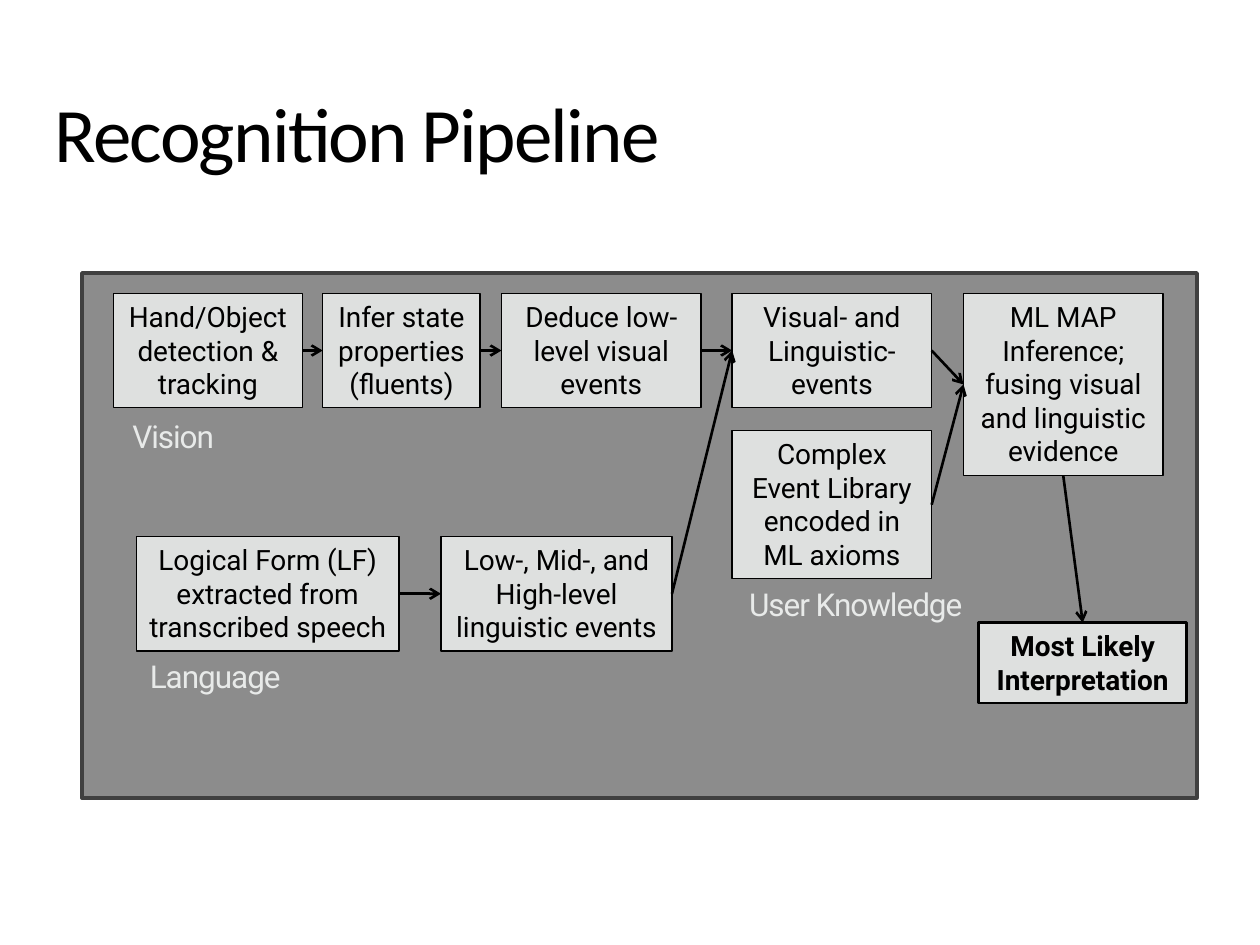
from pptx import Presentation
from pptx.dml.color import RGBColor
from pptx.enum.shapes import MSO_CONNECTOR, MSO_SHAPE
from pptx.enum.text import MSO_ANCHOR, MSO_AUTO_SIZE, PP_ALIGN
from pptx.oxml.ns import qn
from pptx.util import Pt
from lxml.etree import SubElement

THEME = {
    "ink": "000000", "panel": "404040", "box": "E8EAE9",
    "title_font": "Calibri", "body_font": "Roboto",
    "title_size": 44, "label_size": 18, "box_size": 16,
}

# Content: key, text, left, top, width, number of text lines
TITLE = "Recognition Pipeline"
TOP_ROW, LANGUAGE_ROW = 167.6, 306.6
BOXES = [
    ("tracking", "Hand/Object detection & tracking", 64.8, TOP_ROW, 108, 3),
    ("fluents", "Infer state properties (fluents)", 184.4, TOP_ROW, 90, 3),
    ("visual", "Deduce low-level visual events", 286.6, TOP_ROW, 114, 3),
    ("logical", "Logical Form (LF) extracted from transcribed speech",
     78, LANGUAGE_ROW, 150, 3),
    ("linguistic", "Low-, Mid-, and High-level linguistic events",
     252, LANGUAGE_ROW, 132, 3),
    ("library", "Complex Event Library encoded in ML axioms", 418.4, 246, 114, 4),
    ("events", "Visual- and Linguistic-events", 418.4, TOP_ROW, 114, 3),
    ("inference", "ML MAP Inference; fusing visual and linguistic evidence",
     550.6, TOP_ROW, 114, 5),
    ("result", "Most Likely Interpretation", 559.2, 355.8, 119, 2),
]
BOTTOM, LEFT, RIGHT, TOP = 2, 1, 3, 0
ARROWS = [
    ("tracking", RIGHT, "fluents", LEFT),
    ("fluents", RIGHT, "visual", LEFT),
    ("logical", RIGHT, "linguistic", LEFT),
    ("visual", RIGHT, "events", LEFT),
    ("linguistic", RIGHT, "events", LEFT),
    ("events", RIGHT, "inference", LEFT),
    ("library", RIGHT, "inference", LEFT),
    ("inference", BOTTOM, "result", TOP),
]
LABELS = [("Vision", 24, 234.6), ("Language", 48, 372), ("User Knowledge", 414, 331)]


def color(name):
    return RGBColor.from_string(THEME[name])


def write(tf, text, size, font="body_font", fill="ink", bold=False,
          align=PP_ALIGN.CENTER, anchor=MSO_ANCHOR.TOP, spacing=0,
          fit=MSO_AUTO_SIZE.SHAPE_TO_FIT_TEXT):
    tf.word_wrap = True
    tf.auto_size = fit
    tf.vertical_anchor = anchor
    p = tf.paragraphs[0]
    p.alignment = align
    r = p.add_run()
    r.text = text
    r.font.name = THEME[font]
    r.font.size = Pt(THEME[size])
    r.font.bold = bold
    r.font.color.rgb = color(fill)
    if spacing:
        r.font._element.set("spc", str(round(spacing * 100)))


def add_rect(s, left, top, width, height, fill, opacity, line, weight):
    sp = s.shapes.add_shape(MSO_SHAPE.RECTANGLE, Pt(left), Pt(top), Pt(width), Pt(height))
    sp.shadow.inherit = False
    sp.fill.solid()
    sp.fill.fore_color.rgb = color(fill)
    clr = sp._element.spPr.find(qn("a:solidFill"))[0]
    SubElement(clr, qn("a:alpha")).set("val", str(opacity * 1000))
    sp.line.color.rgb = color(line)
    sp.line.width = Pt(weight)
    return sp


def add_arrow(s, start, start_side, end, end_side):
    c = s.shapes.add_connector(MSO_CONNECTOR.STRAIGHT, 0, 0, 0, 0)
    c.begin_connect(start, start_side)
    c.end_connect(end, end_side)
    c.line.color.rgb = color("ink")
    c.line.width = Pt(1.5)
    SubElement(c.line._get_or_add_ln(), qn("a:tailEnd")).set("type", "arrow")
    SubElement(c._element.spPr, qn("a:effectLst"))


def main():
    prs = Presentation()
    prs.slide_width, prs.slide_height = Pt(720), Pt(540)
    s = prs.slides.add_slide(prs.slide_layouts[5])

    # Title
    title = s.shapes.title
    title.left, title.top, title.width, title.height = Pt(24), Pt(30), Pt(666), Pt(90)
    write(title.text_frame, TITLE, "title_size", font="title_font", spacing=-1,
          align=PP_ALIGN.LEFT, anchor=MSO_ANCHOR.MIDDLE, fit=MSO_AUTO_SIZE.NONE)

    # Background panel
    add_rect(s, 46.8, 156, 637.2, 300, "panel", 60, "panel", 2)

    # Pipeline steps: height follows the number of lines
    steps = {}
    for key, text, left, top, width, lines in BOXES:
        final = key == "result"
        sp = add_rect(s, left, top, width, 7.2 + 19.4 * lines, "box", 90, "ink",
                      1.5 if final else 0.75)
        write(sp.text_frame, text, "box_size", bold=final)
        steps[key] = sp

    # Flow between steps
    for start, start_side, end, end_side in ARROWS:
        add_arrow(s, steps[start], start_side, steps[end], end_side)

    # Group labels
    for text, left, top in LABELS:
        tb = s.shapes.add_textbox(Pt(left), Pt(top), Pt(150), Pt(29))
        write(tb.text_frame, text, "label_size", fill="box", spacing=-0.6)

    prs.save("out.pptx")


if __name__ == "__main__":
    main()
